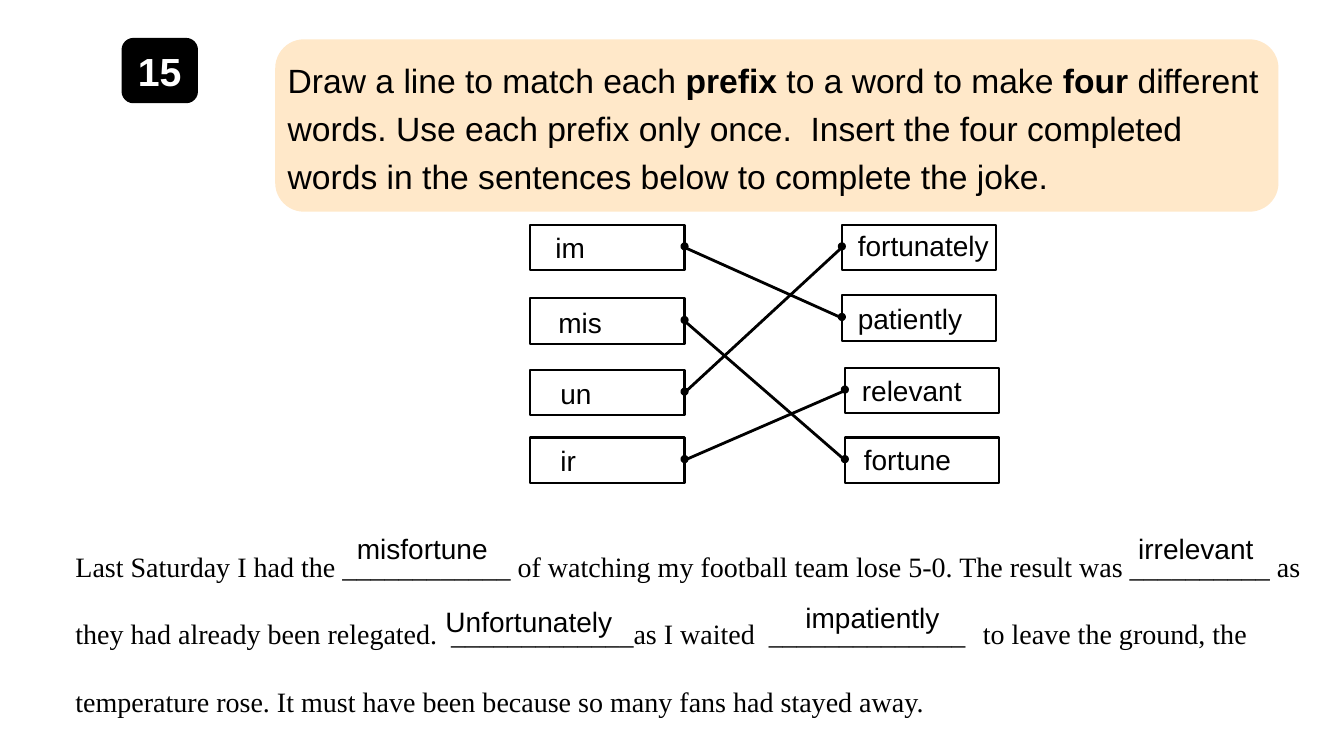
import pptx
import pptx.dml.color
import pptx.enum.shapes
import pptx.enum.text
import pptx.util

BLACK = pptx.dml.color.RGBColor(0x00, 0x00, 0x00)
WHITE = pptx.dml.color.RGBColor(0xFF, 0xFF, 0xFF)
PEACH = pptx.dml.color.RGBColor(0xFF, 0xE8, 0xC9)
SHAPES = pptx.enum.shapes.MSO_SHAPE
CENTER = pptx.enum.text.PP_ALIGN.CENTER
MIDDLE = pptx.enum.text.MSO_ANCHOR.MIDDLE
TOP = pptx.enum.text.MSO_ANCHOR.TOP
LEFT_SIDE, RIGHT_SIDE = 1, 3

CELL = 0.1
BOX_WIDTH, BOX_HEIGHT = 15.3, 4.5
LABEL_HEIGHT = 4.4
DOT_SIZE = 0.6

INSTRUCTION = (
    "Draw a line to match each **prefix** to a word to make **four **different words. "
    "Use each prefix only once.  Insert the four completed words in the sentences "
    "below to complete the joke."
)
JOKE = (
    "Last Saturday I had the ____________ of watching my football team lose 5-0. "
    "The result was __________ as they had already been relegated.  "
    "_____________as I waited  ______________ \tto leave the ground, the temperature "
    "rose. It must have been because so many fans had stayed away."
)
PREFIXES = [
    ("im", 52.6, 22.3, 54.1, 22.4),
    ("mis", 52.6, 29.6, 54.4, 29.8),
    ("un", 52.6, 36.7, 54.6, 36.9),
    ("ir", 52.6, 43.4, 54.6, 43.5),
]
WORDS = [
    ("fortunately", 83.5, 22.3, 84.1, 22.2),
    ("patiently", 83.5, 29.3, 84.1, 29.4),
    ("relevant", 83.8, 36.5, 84.5, 36.6),
    ("fortune", 83.8, 43.4, 84.7, 43.4),
]
MATCHES = [("un", "fortunately"), ("im", "patiently"), ("mis", "fortune"), ("ir", "relevant")]
ANSWERS = [
    ("misfortune", 34.4, 52.2, 15.1),
    ("irrelevant", 111.9, 52.2, 13.5),
    ("impatiently", 78.9, 59.1, 15.4),
    ("Unfortunately", 43.2, 59.5, 18.7),
]


def cells(*counts):
    return [pptx.util.Inches(count * CELL) for count in counts]


def write(shape, text, size=20, font="Arial", color=BLACK, bold=False, align=None,
          anchor=TOP, spacing=None, after=None, inset=None):
    frame = shape.text_frame
    frame.word_wrap = True
    frame.vertical_anchor = anchor
    if inset is not None:
        margin = cells(inset)[0]
        frame.margin_left = frame.margin_right = margin
        frame.margin_top = frame.margin_bottom = margin
    para = frame.paragraphs[0]
    para.alignment = align or pptx.enum.text.PP_ALIGN.LEFT
    if spacing:
        para.line_spacing = spacing
    if after:
        para.space_after = pptx.util.Pt(after)
    for index, part in enumerate(text.split("**")):
        span = para.add_run()
        span.text = part
        span.font.size = pptx.util.Pt(size)
        span.font.name = font
        span.font.color.rgb = color
        span.font.bold = bold or index % 2 == 1


class Worksheet:
    def __init__(self, page):
        self.shapes = page.shapes
        self.boxes = {}

    def shape(self, kind, column, row, width, height, fill=None, line=None):
        shape = self.shapes.add_shape(kind, *cells(column, row, width, height))
        shape.shadow.inherit = False
        if fill is None:
            shape.fill.background()
        else:
            shape.fill.solid()
            shape.fill.fore_color.rgb = fill
        if line is None:
            shape.line.fill.background()
        else:
            shape.line.color.rgb = BLACK
            shape.line.width = pptx.util.Pt(line)
        return shape

    def label(self, text, column, row, width, height=LABEL_HEIGHT, **style):
        box = self.shapes.add_textbox(*cells(column, row, width, height))
        write(box, text, **style)

    def match_box(self, name, column, row, dot_column):
        self.boxes[name] = self.shape(
            SHAPES.RECTANGLE, column, row, BOX_WIDTH, BOX_HEIGHT, line=1.5)
        dot_row = row + (BOX_HEIGHT - DOT_SIZE) / 2 - 0.1
        self.shape(SHAPES.OVAL, dot_column - DOT_SIZE / 2, dot_row,
                   DOT_SIZE, DOT_SIZE, fill=BLACK, line=1.5)

    def match_line(self, prefix, word):
        line = self.shapes.add_connector(
            pptx.enum.shapes.MSO_CONNECTOR.STRAIGHT, 0, 0, 0, 0)
        line.begin_connect(self.boxes[prefix], RIGHT_SIDE)
        line.end_connect(self.boxes[word], LEFT_SIDE)
        line.line.color.rgb = BLACK
        line.line.width = pptx.util.Pt(2)
        properties = line._element.spPr
        properties.append(pptx.oxml.parse_xml(
            '<a:effectLst xmlns:a="http://schemas.openxmlformats.org/drawingml/2006/main"/>'))


def main():
    deck = pptx.Presentation()
    deck.slide_width = pptx.util.Inches(13.33)
    deck.slide_height = pptx.util.Inches(7.5)
    sheet = Worksheet(deck.slides.add_slide(deck.slide_layouts[6]))

    panel = sheet.shape(SHAPES.ROUNDED_RECTANGLE, 27.3, 3.9, 99.5, 17.1, fill=PEACH)
    write(panel, INSTRUCTION, size=24, spacing=1.19, after=6, inset=0.4)
    badge = sheet.shape(SHAPES.ROUNDED_RECTANGLE, 12.2, 3.9, 7.3, 6.2, fill=BLACK, line=2)
    write(badge, "15", size=28, color=WHITE, bold=True, align=CENTER, anchor=MIDDLE, inset=0.4)

    for name, column, row, *_ in PREFIXES:
        sheet.match_box(name, column, row, column + BOX_WIDTH)
    for name, column, row, *_ in WORDS:
        sheet.match_box(name, column, row, column)
    for name, _, _, column, row in PREFIXES + WORDS:
        sheet.label(name, column, row, 16.1 if name == "fortunately" else 12.6)
    for prefix, word in MATCHES:
        sheet.match_line(prefix, word)

    sheet.label(JOKE, 6.5, 50.7, 124.6, 23.6, font="Times New Roman", spacing=2.0, after=3)
    for answer, column, row, width in ANSWERS:
        sheet.label(answer, column, row, width)

    deck.save("out.pptx")


if __name__ == "__main__":
    main()
